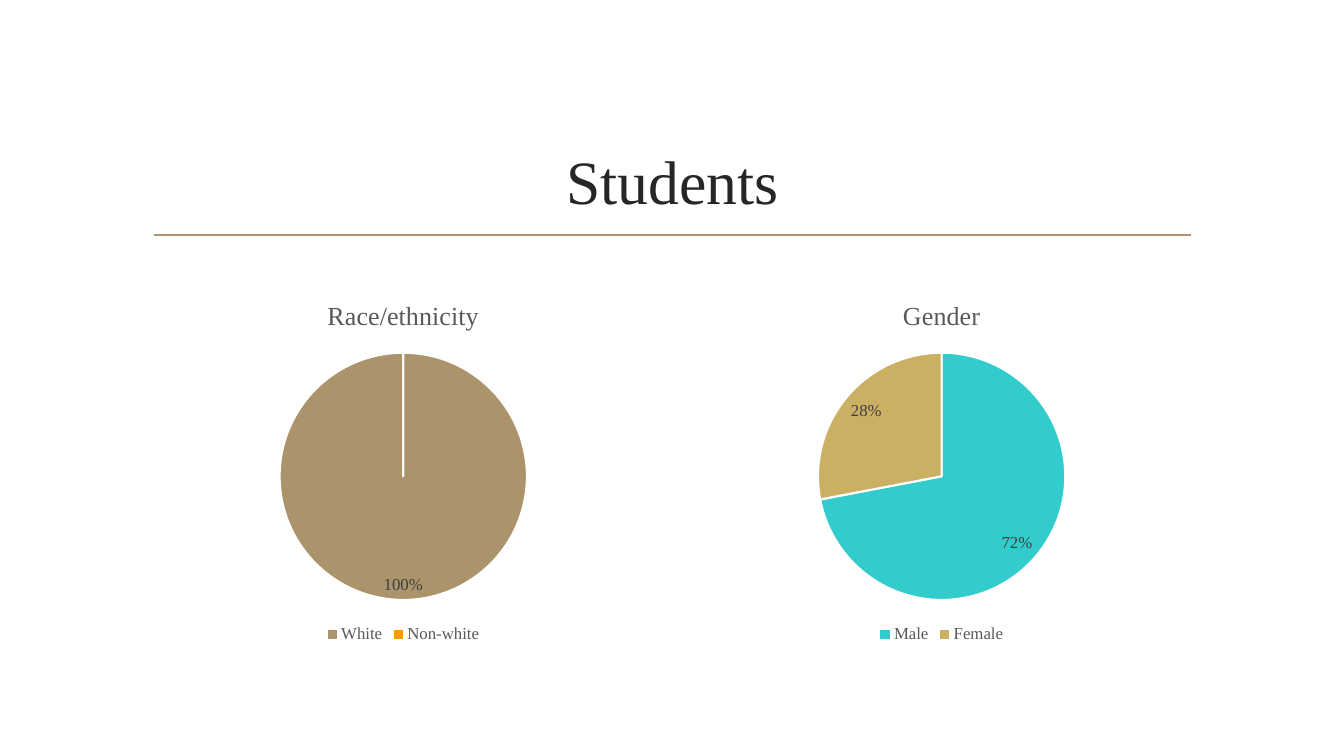
from dataclasses import dataclass

from lxml import etree
from pptx import Presentation
from pptx import util as u
from pptx.chart import data as chart_data
from pptx.dml.color import RGBColor
from pptx.enum import chart as chart_enum, shapes, text
from pptx.oxml import ns


@dataclass(frozen=True)
class Theme:
    font: str = "Times New Roman"
    title_color: str = "262626"
    caption_color: str = "595959"
    label_color: str = "404040"
    rule_color: str = "AB946B"
    edge_color: str = "FFFFFF"
    title_size: float = 44
    caption_size: float = 18.6
    label_size: float = 12
    base_size: float = 10
    rule_width: float = 1.25
    edge_width: float = 1.5


@dataclass(frozen=True)
class Area:
    """A rectangle in percent of the slide's width and height."""
    left: float
    top: float
    width: float
    height: float


@dataclass(frozen=True)
class Share:
    category: str
    percent: int
    color: str


@dataclass(frozen=True)
class Pie:
    caption: str
    shares: tuple[Share, ...]


THEME = Theme()
SLIDE_WIDTH = u.Inches(13.33)
SLIDE_HEIGHT = u.Inches(7.5)
TITLE_AREA = Area(10.65, 14.27, 78.77, 19.07)
RULE_AREA = Area(11.48, 31.07, 77.12, 0)
PIE_WIDTH, PIE_TOP, PIE_HEIGHT = 38.71, 37.33, 48.27
PIES = (
    Pie("Race/ethnicity", (Share("White", 100, "AB946B"), Share("Non-white", 0, "FF9900"))),
    Pie("Gender", (Share("Male", 72, "33CCCC"), Share("Female", 28, "CBAF62"))),
)


def across(percent: float) -> int:
    return round(SLIDE_WIDTH * percent / 100)


def down(percent: float) -> int:
    return round(SLIDE_HEIGHT * percent / 100)


def place(area: Area) -> tuple[int, int, int, int]:
    return across(area.left), down(area.top), across(area.width), down(area.height)


def format_font(font, size: float, color: str) -> None:
    font.name = THEME.font
    font.size = u.Pt(size)
    font.bold = False
    font.color.rgb = RGBColor.from_string(color)


def add_title(slide, wording: str) -> None:
    title = slide.shapes.title
    title.left, title.top, title.width, title.height = place(TITLE_AREA)
    frame = title.text_frame
    frame.vertical_anchor = text.MSO_ANCHOR.MIDDLE
    paragraph = frame.paragraphs[0]
    paragraph.alignment = text.PP_ALIGN.CENTER
    run = paragraph.add_run()
    run.text = wording
    format_font(run.font, THEME.title_size, THEME.title_color)


def add_rule(slide) -> None:
    left, top, width, height = place(RULE_AREA)
    rule = slide.shapes.add_connector(
        shapes.MSO_CONNECTOR.STRAIGHT, left, top, left + width, top + height)
    rule.line.color.rgb = RGBColor.from_string(THEME.rule_color)
    rule.line.width = u.Pt(THEME.rule_width)
    etree.SubElement(rule._element.spPr, ns.qn("a:effectLst"))


def add_pie(slide, pie: Pie, area: Area) -> None:
    values = chart_data.CategoryChartData()
    values.categories = [share.category for share in pie.shares]
    values.add_series(pie.caption, [share.percent for share in pie.shares])
    chart = slide.shapes.add_chart(
        chart_enum.XL_CHART_TYPE.PIE, *place(area), values).chart
    format_font(chart.font, THEME.base_size, "000000")

    chart.has_title = True
    run = chart.chart_title.text_frame.paragraphs[0].add_run()
    run.text = pie.caption
    format_font(run.font, THEME.caption_size, THEME.caption_color)
    chart.chart_title.include_in_layout = False

    chart.has_legend = True
    chart.legend.position = chart_enum.XL_LEGEND_POSITION.BOTTOM
    chart.legend.include_in_layout = False
    format_font(chart.legend.font, THEME.label_size, THEME.caption_color)

    plot = chart.plots[0]
    plot.vary_by_categories = True
    series = plot.series[0]
    for index, share in enumerate(pie.shares):
        slice_format = series.points[index].format
        slice_format.fill.solid()
        slice_format.fill.fore_color.rgb = RGBColor.from_string(share.color)
        slice_format.line.color.rgb = RGBColor.from_string(THEME.edge_color)
        slice_format.line.width = u.Pt(THEME.edge_width)

    labels = series.data_labels
    labels.show_value = True
    labels.number_format = '0"%";;'
    labels.number_format_is_linked = False
    labels.position = chart_enum.XL_LABEL_POSITION.INSIDE_END
    format_font(labels.font, THEME.label_size, THEME.label_color)


def main() -> None:
    presentation = Presentation()
    presentation.slide_width = SLIDE_WIDTH
    presentation.slide_height = SLIDE_HEIGHT
    title_only = presentation.slide_layouts.get_by_name("Title Only")
    slide = presentation.slides.add_slide(title_only)
    add_rule(slide)
    add_title(slide, "Students")
    pie_step = (TITLE_AREA.width - PIE_WIDTH) / (len(PIES) - 1)
    for column, pie in enumerate(PIES):
        left = TITLE_AREA.left + column * pie_step
        add_pie(slide, pie, Area(left, PIE_TOP, PIE_WIDTH, PIE_HEIGHT))
    presentation.save("out.pptx")


if __name__ == "__main__":
    main()
